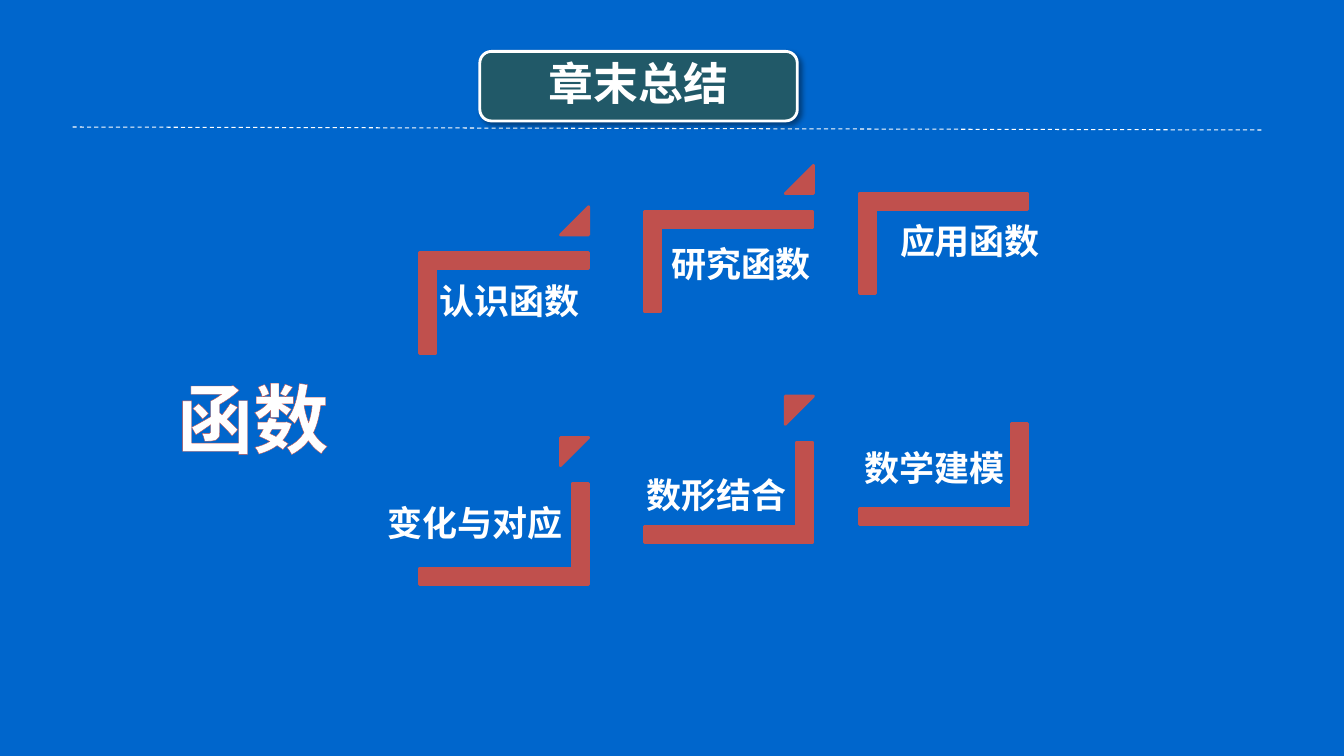
from lxml import etree
from pptx import Presentation
from pptx import util as u
from pptx.dml.color import RGBColor
from pptx.enum import dml, shapes, text
from pptx.oxml import parse_xml
from pptx.oxml.ns import nsdecls, qn

COLORS = {"back": "0066CC", "accent": "C0504D", "banner": "215968",
          "white": "FFFFFF", "shadow": "000000"}
CJK = "Noto Sans CJK SC"
W, H = u.Inches(13.33), u.Inches(7.5)
COLS, ROWS = 160, 90
ARM = 0.161
CORNER_W, CORNER_H = 12, 20.04
STEPS = [(0, 7.08), (26.76, 2.16), (52.32, 0)]
LABEL_SIZES = [(24.48, 10.08), (24.84, 14.64), (22.8, 9.24)]
TOP_LABELS = [("认识函数", -2.88, 6.6), ("研究函数", -2.04, 7.08), ("应用函数", -0.36, 6.6)]
BOTTOM_LABELS = [("变化与对应", -9, 5.52), ("数形结合", -4.92, 7.08), ("数学建模", -4.56, 6.12)]


def grid(*box):
    return [round(n * (H / ROWS if i % 2 else W / COLS)) for i, n in enumerate(box)]


def rgb(name):
    return RGBColor.from_string(COLORS[name])


def shadow_effect():
    return parse_xml(
        f'<a:effectLst {nsdecls("a")}><a:outerShdw blurRad="50800" dist="38100" '
        f'dir="2700000" algn="tl" rotWithShape="0"><a:srgbClr val="{COLORS["shadow"]}">'
        '<a:alpha val="40000"/></a:srgbClr></a:outerShdw></a:effectLst>')


def add_shape(s, kind, box, fill, line, rotation=0):
    sp = s.shapes.add_shape(kind, *grid(*box))
    sp.shadow.inherit = False
    sp.fill.solid()
    sp.fill.fore_color.rgb = rgb(fill)
    sp.line.color.rgb = rgb(line)
    sp.line.width = u.Pt(2)
    sp.rotation = rotation
    return sp


def write(sp, words, size, font=CJK, inset=0.1, align=None, spacing=0.9):
    tf = sp.text_frame
    tf.word_wrap = True
    tf.margin_left = tf.margin_right = tf.margin_top = tf.margin_bottom = u.Inches(inset)
    p = tf.paragraphs[0]
    p.alignment = align
    p.line_spacing = spacing
    r = p.add_run()
    r.text = words
    r.font.size, r.font.bold, r.font.name = u.Pt(size), True, font
    r.font.color.rgb = rgb("white")
    props = p._p.find(qn("a:r")).find(qn("a:rPr"))
    props.find(qn("a:latin")).addnext(etree.Element(qn("a:ea"), typeface=CJK))
    return props


def banner(s, box):
    x, y, w, h = box
    sp = add_shape(s, shapes.MSO_SHAPE.ROUNDED_RECTANGLE, box, "banner", "white")
    props = sp.element.spPr
    props.replace(props.find(qn("a:effectLst")), shadow_effect())
    title = s.shapes.title
    title.left, title.top, title.width, title.height = grid(x + 0.42, y + 0.42, w - 0.84, h - 0.84)
    title.text_frame.vertical_anchor = text.MSO_ANCHOR.MIDDLE
    write(title, "章末总结", 32, "Calibri", 0.13, text.PP_ALIGN.CENTER)
    sp.element.addnext(title.element)


def divider(s, ends):
    line = s.shapes.add_connector(shapes.MSO_CONNECTOR.STRAIGHT, *grid(*ends))
    line.line.color.rgb = rgb("white")
    line.line.width = u.Pt(0.75)
    line.line.dash_style = dml.MSO_LINE.DASH
    etree.SubElement(line.element.spPr, qn("a:effectLst"))


def staircase(s, origin, labels, corner_turn, triangle_turn):
    left, top = origin
    for i, ((dx, dy), size, (words, lx, ly)) in enumerate(zip(STEPS, LABEL_SIZES, labels)):
        x, y = left + dx, top + dy
        corner = add_shape(s, shapes.MSO_SHAPE.CORNER, (x, y, CORNER_W, CORNER_H),
                           "accent", "accent", corner_turn)
        corner.adjustments[0] = corner.adjustments[1] = ARM
        label = s.shapes.add_textbox(*grid(x + lx, y + ly, *size))
        write(label, words, 25)
        if i < len(STEPS) - 1:
            tri = add_shape(s, shapes.MSO_SHAPE.ISOSCELES_TRIANGLE,
                            (x + 12.72, y - 1.44, 3.36, 3.36), "accent", "accent", triangle_turn)
            tri.adjustments[0] = 1


def topic(s, box):
    sp = s.shapes.add_textbox(*grid(*box))
    props = write(sp, "函数", 54, inset=0.05, align=text.PP_ALIGN.CENTER, spacing=1)
    sp.text_frame.word_wrap = False
    sp.text_frame.auto_size = text.MSO_AUTO_SIZE.SHAPE_TO_FIT_TEXT
    props.insert(0, parse_xml(
        f'<a:ln {nsdecls("a")} w="6604"><a:solidFill><a:srgbClr val="{COLORS["accent"]}"/>'
        '</a:solidFill></a:ln>'))
    props.find(qn("a:solidFill")).addnext(shadow_effect())


def main():
    prs = Presentation()
    prs.slide_width, prs.slide_height = W, H
    s = prs.slides.add_slide(prs.slide_layouts[5])
    s.background.fill.solid()
    s.background.fill.fore_color.rgb = rgb("back")
    staircase(s, (54, 46.44), BOTTOM_LABELS, 270, 180)
    divider(s, (8.64, 15.12, 150.48, 15.48))
    banner(s, (57.12, 6.12, 37.8, 8.28))
    staircase(s, (54, 18.96), TOP_LABELS, 90, 0)
    topic(s, (19.68, 43.68, 20.88, 12.12))
    prs.save("out.pptx")


if __name__ == "__main__":
    main()
